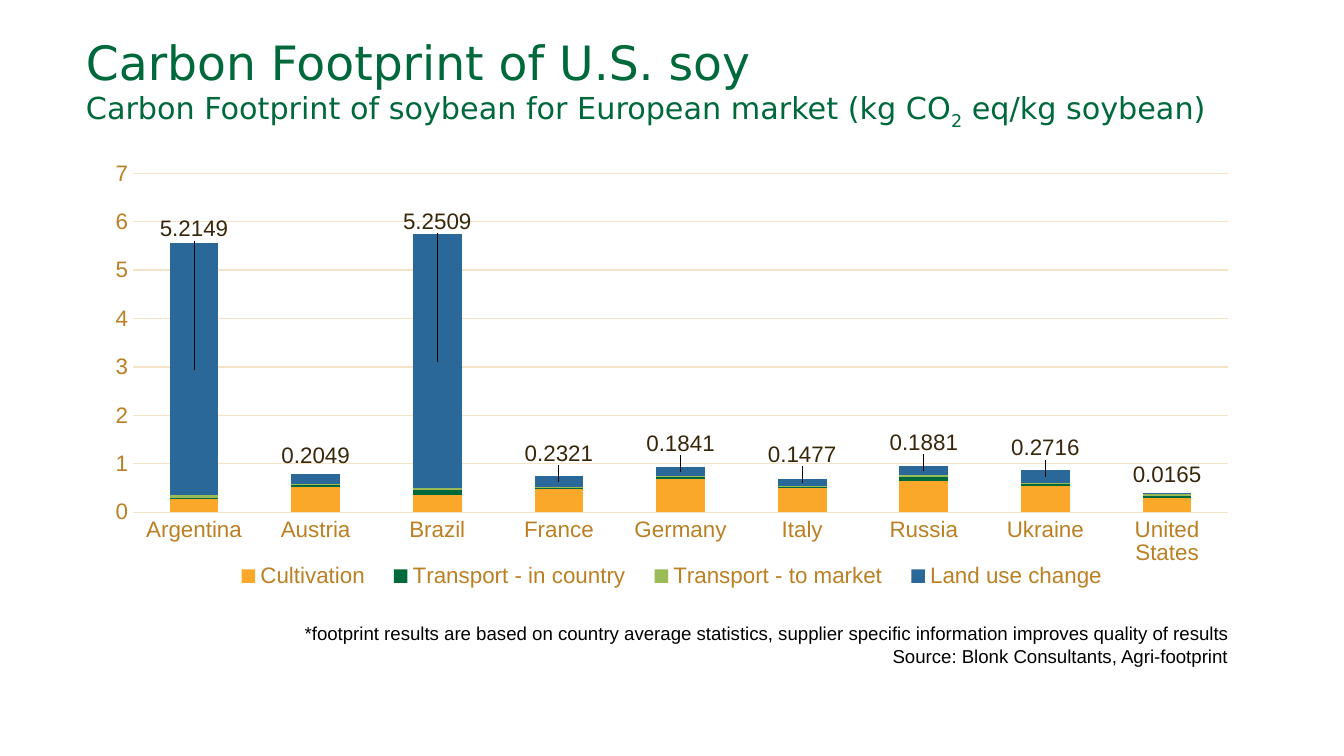
from dataclasses import dataclass
from lxml.etree import SubElement
from pptx import Presentation
from pptx.chart.data import CategoryChartData
from pptx.dml.color import RGBColor
from pptx.enum.chart import XL_CHART_TYPE, XL_LEGEND_POSITION, XL_TICK_MARK
from pptx.enum.text import MSO_ANCHOR, MSO_AUTO_SIZE, PP_ALIGN
from pptx.oxml import parse_xml
from pptx.oxml.ns import nsdecls, qn
from pptx.util import Pt


@dataclass(frozen=True)
class Theme:
    green: str = "00693C"
    gold: str = "BB8024"
    grid: str = "F4E3C7"
    brown: str = "39270B"
    black: str = "000000"
    bars: tuple = ("FAA829", "00693C", "9BBB59", "296899")
    head: str = "DejaVu Sans"
    body: str = "Arial"
    big: float = 25.3
    sub: float = 16.2
    mid: float = 12
    small: float = 10


LANDS = ("Argentina", "Austria", "Brazil", "France", "Germany", "Italy",
         "Russia", "Ukraine", "United States")
PARTS = {
    "Cultivation": (0.27, 0.52, 0.35, 0.49, 0.69, 0.51, 0.64, 0.55, 0.3),
    "Transport - in country": (0.03, 0.04, 0.1, 0.02, 0.03, 0.02, 0.09, 0.04, 0.04),
    "Transport - to market": (0.05, 0.03, 0.04, 0.01, 0.02, 0.01, 0.03, 0.02, 0.04),
    "Land use change": (5.2149, 0.2049, 5.2509, 0.2321, 0.1841, 0.1477,
                        0.1881, 0.2716, 0.0165),
}
SHIFTS = (-0.3, -0.05, -0.3, -0.06, -0.06, -0.06, -0.06, -0.06, -0.04)


class Deck:
    """Holds the theme and the current slide, and draws each kind of element."""

    def __init__(self, theme):
        self.theme = theme
        self.file = Presentation()
        self.file.slide_width, self.file.slide_height = Pt(720), Pt(405)
        self.slide = self.file.slides.add_slide(self.file.slide_layouts[5])

    def style(self, font, size, color, face):
        font.size, font.name = Pt(size), face
        font.color.rgb = RGBColor.from_string(color)

    def place(self, node, spot, **sizes):
        layout = SubElement(node, qn("c:layout"))
        node.insert(spot, layout)
        rule = SubElement(layout, qn("c:manualLayout"))
        for key, val in sizes.items():
            SubElement(rule, qn(f"c:{key}")).set("val", str(val))

    def title(self, head, parts, box):
        t = self.theme
        shape = self.slide.shapes.title
        shape.left, shape.top, shape.width, shape.height = map(Pt, box)
        frame = shape.text_frame
        frame.auto_size, frame.word_wrap = MSO_AUTO_SIZE.NONE, True
        frame.vertical_anchor = MSO_ANCHOR.MIDDLE
        frame.margin_left = frame.margin_right = Pt(10)
        frame.margin_top = frame.margin_bottom = Pt(5)
        frame.text = head
        para = frame.paragraphs[0]
        para.alignment = PP_ALIGN.LEFT
        self.style(para.runs[0].font, t.big, t.green, t.head)
        para.add_line_break()
        gap = para._p.find(qn("a:br"))
        gap.append(parse_xml(f'<a:rPr {nsdecls("a")} sz="{round(t.big * 100)}"/>'))
        for text, base in parts:
            run = para.add_run()
            run.text = text
            self.style(run.font, t.sub, t.green, t.head)
            if base:
                run.font._element.set("baseline", str(base))

    def chart(self, box):
        t = self.theme
        data = CategoryChartData()
        data.categories = LANDS
        for name, vals in PARTS.items():
            data.add_series(name, vals)
        chart = self.slide.shapes.add_chart(
            XL_CHART_TYPE.COLUMN_STACKED, *map(Pt, box), data).chart
        chart.has_title = False
        self.style(chart.font, t.small, t.brown, t.body)
        area = chart._chartSpace.find(".//" + qn("c:plotArea"))
        for old in area.findall(qn("c:layout")):
            area.remove(old)
        self.place(area, 0, layoutTarget="inner", xMode="edge", yMode="edge",
                   x=0.035, y=0.046, w=0.945, h=0.727)
        self.axes(chart)
        self.legend(chart)
        plot = chart.plots[0]
        plot.gap_width, plot.overlap, plot.vary_by_categories = 150, 100, False
        for bar, color in zip(plot.series, t.bars):
            bar.format.fill.solid()
            bar.format.fill.fore_color.rgb = RGBColor.from_string(color)
        self.labels(plot.series[-1])

    def axes(self, chart):
        t = self.theme
        cat, val = chart.category_axis, chart.value_axis
        for axis in (cat, val):
            axis.major_tick_mark = axis.minor_tick_mark = XL_TICK_MARK.NONE
            self.style(axis.tick_labels.font, t.mid, t.gold, t.body)
        val.minimum_scale, val.maximum_scale, val.major_unit = 0, 7, 1
        val.has_major_gridlines = True
        val.format.line.fill.background()
        for line in (cat.format.line, val.major_gridlines.format.line):
            line.width = Pt(0.75)
            line.color.rgb = RGBColor.from_string(t.grid)

    def legend(self, chart):
        t = self.theme
        chart.has_legend = True
        key = chart.legend
        key.position, key.include_in_layout = XL_LEGEND_POSITION.BOTTOM, False
        self.style(key.font, t.mid, t.gold, t.body)
        node = key._element
        for old in node.findall(qn("c:layout")):
            node.remove(old)
        self.place(node, 1, xMode="edge", yMode="edge", x=0.11, y=0.88, w=0.78, h=0.06)

    def labels(self, bar):
        t = self.theme
        marks = bar.data_labels
        marks.show_value = True
        self.style(marks.font, t.mid, t.brown, t.body)
        for spot in range(len(SHIFTS)):
            self.style(bar.points[spot].data_label.font, t.mid, t.brown, t.body)
        for node, rise in zip(marks._element.findall(qn("c:dLbl")), SHIFTS):
            self.place(node, 1, x=0, y=rise)

    def note(self, lines, box):
        t = self.theme
        frame = self.slide.shapes.add_textbox(*map(Pt, box)).text_frame
        frame.word_wrap = True
        frame.text = "\n".join(lines)
        for para in frame.paragraphs:
            para.alignment = PP_ALIGN.RIGHT
            self.style(para.runs[0].font, t.small, t.black, t.body)


def main():
    deck = Deck(Theme())
    deck.title("Carbon Footprint of U.S. soy",
               (("Carbon Footprint of soybean for European market (kg CO", 0),
                ("2", -25000), (" eq/kg soybean)", 0)),
               (36, 10, 648, 67.7))
    deck.chart((49.7, 81.4, 620.6, 249.8))
    deck.note(("*footprint results are based on country average statistics, "
               "supplier specific information improves quality of results",
               "Source: Blonk Consultants, Agri-footprint"),
              (142.6, 329.8, 522, 43.9))
    deck.file.save("out.pptx")


if __name__ == "__main__":
    main()
